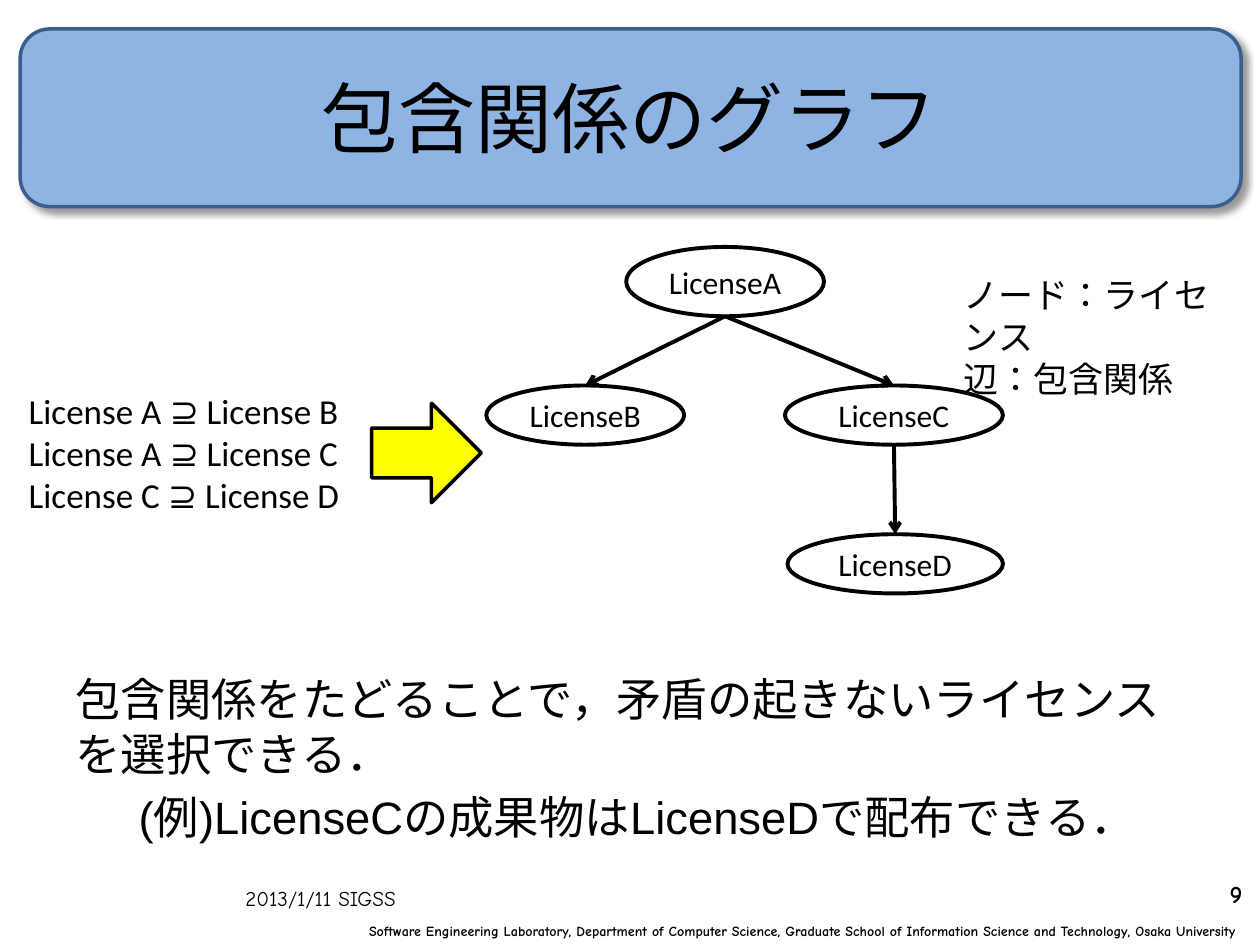
from dataclasses import dataclass

from pptx import Presentation
from pptx.dml.color import RGBColor as Rgb
from pptx.enum.lang import MSO_LANGUAGE_ID as Lang
from pptx.enum.shapes import MSO_CONNECTOR as Conn, MSO_SHAPE as Kind
from pptx.enum.text import MSO_ANCHOR as Anchor, MSO_AUTO_SIZE as Auto, PP_ALIGN as Align
from pptx.oxml import parse_xml
from pptx.oxml.ns import nsdecls, qn
from pptx.util import Inches, Pt


@dataclass(frozen=True)
class Theme:
    ink: str = "000000"
    paper: str = "FFFFFF"
    band: str = "8EB4E3"
    edge: str = "3A5F8C"
    gold: str = "FFFF00"
    head: str = "Noto Sans CJK JP"
    main: str = "Arial"
    text: str = "Calibri"
    foot: str = "Comic Neue"
    title: float = 44
    body: float = 25.9
    note: float = 20
    node: float = 18
    page: float = 14
    date: float = 12
    lab: float = 8


class Deck:
    def __init__(self, theme):
        self.theme = theme
        self.prs = Presentation()
        self.prs.slide_width, self.prs.slide_height = Inches(10), Inches(7.5)
        self.slide = self.prs.slides.add_slide(self.prs.slide_layouts[1])

    def place(self, shape, box):
        for name, val in zip(("left", "top", "width", "height"), box):
            setattr(shape, name, Inches(val))

    def set_text(self, frame, lines, font, size, bold=False, **form):
        """Fill a frame with paragraphs; form holds paragraph values."""
        frame.text = "\n".join(lines)
        look = {"name": font, "size": Pt(size), "bold": bold,
                "language_id": Lang.JAPANESE}
        for para in frame.paragraphs:
            for name, val in form.items():
                setattr(para, name, val)
            for run in para.runs:
                for name, val in look.items():
                    setattr(run.font, name, val)
                run.font.color.rgb = Rgb.from_string(self.theme.ink)

    def shape(self, kind, box, fill, edge, width):
        item = self.slide.shapes.add_shape(kind, *map(Inches, box))
        item.shadow.inherit = False
        item.fill.solid()
        item.fill.fore_color.rgb = Rgb.from_string(fill)
        item.line.color.rgb = Rgb.from_string(edge)
        item.line.width = Pt(width)
        return item

    def banner(self, box):
        item = self.shape(Kind.ROUNDED_RECTANGLE, box, self.theme.band, self.theme.edge, 2)
        glow = parse_xml(
            f'<a:outerShdw {nsdecls("a")} blurRad="{Pt(4)}" dist="{Pt(3)}" '
            'dir="2700000" algn="tl" rotWithShape="0"><a:srgbClr val="000000">'
            '<a:alpha val="40000"/></a:srgbClr></a:outerShdw>')
        item._element.spPr.find(qn("a:effectLst")).append(glow)
        # The banner lies behind the title
        tree = item._element.getparent()
        tree.remove(item._element)
        tree.insert(2, item._element)

    def title(self, text, box):
        item = self.slide.shapes.title
        self.place(item, box)
        self.set_text(item.text_frame, [text], self.theme.head, self.theme.title,
                      alignment=Align.CENTER)
        item.text_frame.vertical_anchor = Anchor.MIDDLE

    def body(self, lines, box):
        item = self.slide.placeholders[1]
        self.place(item, box)
        frame = item.text_frame
        self.set_text(frame, [text for text, _ in lines], self.theme.main, self.theme.body)
        frame.auto_size = Auto.NONE
        for rank, (para, (_, level)) in enumerate(zip(frame.paragraphs, lines)):
            para.level = level
            para.space_before = Pt(5.2 if rank else 0)
            props = para._p.get_or_add_pPr()
            props.set("marL", str(Inches(0.5 * level)))
            props.set("indent", "0")
            props.append(parse_xml(f'<a:buNone {nsdecls("a")}/>'))

    def node(self, text, box):
        item = self.shape(Kind.OVAL, box, self.theme.paper, self.theme.ink, 2.25)
        frame = item.text_frame
        frame.word_wrap = False
        frame.vertical_anchor = Anchor.MIDDLE
        self.set_text(frame, [text], self.theme.text, self.theme.node,
                      alignment=Align.CENTER)

    def arrow(self, start, end):
        line = self.slide.shapes.add_connector(Conn.STRAIGHT, *map(Inches, start + end))
        line.line.color.rgb = Rgb.from_string(self.theme.ink)
        line.line.width = Pt(2.25)
        props = line._element.spPr
        props.find(qn("a:ln")).append(
            parse_xml(f'<a:tailEnd {nsdecls("a")} type="arrow"/>'))
        props.append(parse_xml(f'<a:effectLst {nsdecls("a")}/>'))

    def label(self, lines, box, font, size, wrap=True, **form):
        frame = self.slide.shapes.add_textbox(*map(Inches, box)).text_frame
        frame.word_wrap = wrap
        self.set_text(frame, lines, font, size, **form)


def main():
    theme = Theme()
    deck = Deck(theme)

    # Title and body
    deck.banner((0.16, 0.23, 9.69, 1.41))
    deck.title("包含関係のグラフ", (0.5, 0.3, 9, 1.25))
    deck.body([("包含関係をたどることで，矛盾の起きないライセンスを選択できる．", 0),
               ("(例)LicenseCの成果物はLicenseDで配布できる．", 1)],
              (0.5, 5.28, 9, 1.42))

    # Footer
    deck.label(["Software Engineering Laboratory, Department of Computer Science, "
                "Graduate School of Information Science and Technology, Osaka University"],
               (1.85, 7.27, 8.07, 0.23), theme.foot, theme.lab, wrap=False,
               bold=True, alignment=Align.RIGHT)
    deck.label(["2013/1/11 SIGSS"], (1.85, 6.98, 2.33, 0.24), theme.foot, theme.date)
    deck.label(["9"], (9.45, 6.93, 0.51, 0.28), theme.foot, theme.page,
               bold=True, alignment=Align.RIGHT)

    # License graph
    nodes = {"A": (4.97, 1.96, 1.57, 0.55), "B": (3.86, 3.06, 1.57, 0.47),
             "C": (6.23, 3.06, 1.73, 0.47), "D": (6.25, 4.24, 1.71, 0.47)}
    for name, box in nodes.items():
        deck.node(f"License{name}", box)
    edges = ("AB", "AC", "CD")
    for top, low in edges:
        x, y, w, h = nodes[top]
        left, down, wide, _ = nodes[low]
        deck.arrow((x + w / 2, y + h), (left + wide / 2, down))

    # Legend, relations and block arrow
    deck.label(["ノード：ライセンス", "辺：包含関係"], (7.55, 2.12, 2.22, 0.77),
               theme.text, theme.note)
    deck.label([f"License {top} ⊇ License {low}" for top, low in edges],
               (0.13, 3.04, 2.76, 1.11), theme.text, theme.note)
    deck.shape(Kind.RIGHT_ARROW, (2.95, 3.2, 0.87, 0.79), theme.gold, theme.ink, 2)

    deck.prs.save("out.pptx")


if __name__ == "__main__":
    main()
